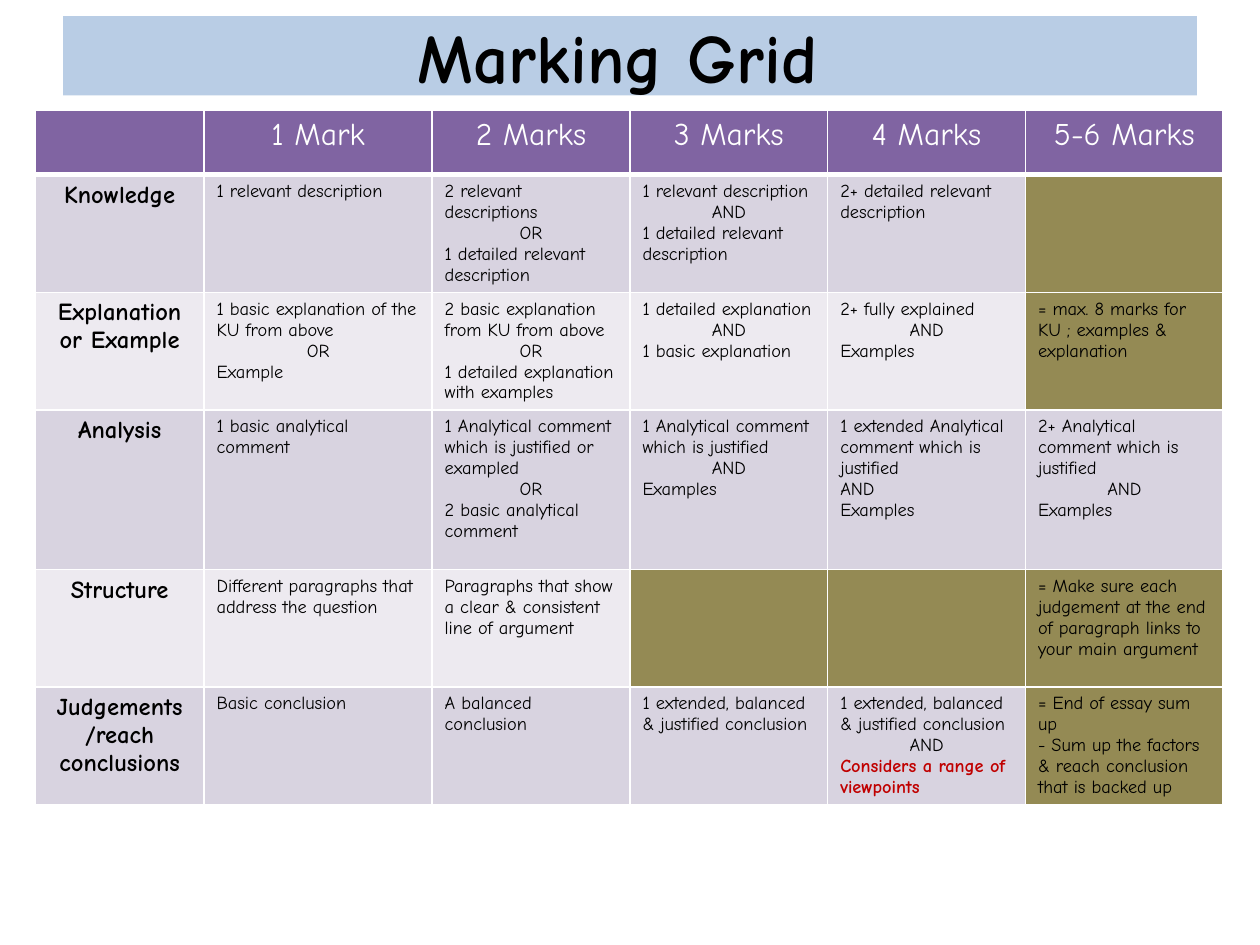
import lxml.etree
import pptx
import pptx.dml.color
import pptx.enum.text
import pptx.oxml.ns
import pptx.util

WIDE, HIGH = 10, 7.5
MID = pptx.enum.text.PP_ALIGN.CENTER
LEFT = pptx.enum.text.PP_ALIGN.LEFT
FONT = "Comic Neue"
FORMS = {
    "title": {"name": FONT, "size": pptx.util.Pt(39.6), "bold": True},
    "head": {"name": FONT, "size": pptx.util.Pt(18), "bold": False},
    "side": {"name": FONT, "size": pptx.util.Pt(14), "bold": True},
    "body": {"name": FONT, "size": pptx.util.Pt(10.5), "bold": False},
    "note": {"name": FONT, "size": pptx.util.Pt(10.5), "bold": True},
}
INKS = {"head": "FFFFFF", "note": "C00000"}
HEAD, BANDS, OLIVE = "8064A2", ("EDEAF0", "D8D3E0"), "948A54"
SHUT = {(1, 5), (2, 5), (4, 3), (4, 4), (4, 5), (5, 5)}
COLS = [0.134, 0.181] + [0.157] * 4
ROWS = [0.068, 0.124, 0.124, 0.169, 0.124, 0.124]
# A leading ^ centres a line; a leading ! marks it as a note.
GRID = [
    ["", "1 Mark", "2 Marks", "3 Marks", "4 Marks", "5-6 Marks"],
    ["Knowledge",
     "1 relevant description",
     "2 relevant descriptions\n^OR\n1 detailed relevant description",
     "1 relevant description\n^AND\n1 detailed relevant description",
     "2+ detailed relevant description",
     ""],
    ["Explanation or Example",
     "1 basic explanation of the KU from above\n^OR\nExample",
     "2 basic explanation from KU from above\n^OR\n1 detailed explanation with examples",
     "1 detailed explanation\n^AND\n1 basic explanation",
     "2+ fully explained\n^AND\nExamples",
     "= max. 8 marks for KU ; examples & explanation"],
    ["Analysis",
     "1 basic analytical comment",
     "1 Analytical comment which is justified or exampled\n^OR\n2 basic analytical comment",
     "1 Analytical comment which is justified\n^AND\nExamples",
     "1 extended Analytical comment which is justified\nAND\nExamples",
     "2+ Analytical comment which is justified\n^AND\nExamples"],
    ["Structure",
     "Different paragraphs that address the question",
     "Paragraphs that show a clear & consistent line of argument",
     "",
     "",
     "= Make sure each judgement at the end of paragraph links to your main argument"],
    ["Judgements /reach conclusions",
     "Basic conclusion",
     "A balanced conclusion",
     "1 extended, balanced & justified conclusion",
     "1 extended, balanced & justified conclusion\n^AND\n!Considers a range of viewpoints",
     "= End of essay sum up\n- Sum up the factors & reach conclusion that is backed up"],
]


def tint(code):
    return pptx.dml.color.RGBColor.from_string(code)


def across(part):
    return pptx.util.Inches(part * WIDE)


def down(part):
    return pptx.util.Inches(part * HIGH)


class Deck:
    def __init__(self):
        self.show = pptx.Presentation()
        self.show.slide_width, self.show.slide_height = across(1), down(1)
        self.slide = self.show.slides.add_slide(self.show.slide_layouts[5])

    def paint(self, item, code):
        item.fill.solid()
        item.fill.fore_color.rgb = tint(code)

    def label(self, para, text, form, align):
        para.alignment = align
        run = para.add_run()
        run.text = text
        for key, value in FORMS[form].items():
            setattr(run.font, key, value)
        run.font.color.rgb = tint(INKS.get(form, "000000"))

    def title(self, text, left, top, width, height, code):
        box = self.slide.shapes.title
        box.left, box.top = across(left), down(top)
        box.width, box.height = across(width), down(height)
        self.paint(box, code)
        frame = box.text_frame
        frame.auto_size = pptx.enum.text.MSO_AUTO_SIZE.NONE
        frame.vertical_anchor = pptx.enum.text.MSO_ANCHOR.MIDDLE
        self.label(frame.paragraphs[0], text, "title", MID)

    def edge(self, cell, base):
        props = cell._tc.get_or_add_tcPr()
        for side in "LRTB":
            size = pptx.util.Pt(base if side == "B" else 1)
            line = lxml.etree.SubElement(
                props, pptx.oxml.ns.qn("a:ln" + side), w=str(int(size)))
            fill = lxml.etree.SubElement(line, pptx.oxml.ns.qn("a:solidFill"))
            lxml.etree.SubElement(fill, pptx.oxml.ns.qn("a:srgbClr"), val="FFFFFF")

    def cell(self, cell, text, form, code, base):
        self.edge(cell, base)
        self.paint(cell, code)
        for spot, line in enumerate(text.split("\n") if text else []):
            frame = cell.text_frame
            para = frame.add_paragraph() if spot else frame.paragraphs[0]
            mid = form != "body" or line.startswith("^")
            kind = "note" if line.startswith("!") else form
            self.label(para, line.lstrip("^!"), kind, MID if mid else LEFT)

    def table(self, grid, left, top):
        table = self.slide.shapes.add_table(
            len(ROWS), len(COLS), across(left), down(top),
            across(sum(COLS)), down(sum(ROWS))).table
        for col, part in zip(table.columns, COLS):
            col.width = across(part)
        for row, part in zip(table.rows, ROWS):
            row.height = down(part)
        for r, line in enumerate(grid):
            for c, text in enumerate(line):
                form = "head" if r == 0 else "side" if c == 0 else "body"
                code = HEAD if r == 0 else OLIVE if (r, c) in SHUT else BANDS[r % 2]
                self.cell(table.cell(r, c), text, form, code, 1 if r else 3)


def main():
    deck = Deck()
    deck.title("Marking Grid ", 0.05, 0.017, 0.9, 0.084, "B9CDE5")
    deck.table(GRID, 0.028, 0.117)
    deck.show.save("out.pptx")


if __name__ == "__main__":
    main()
